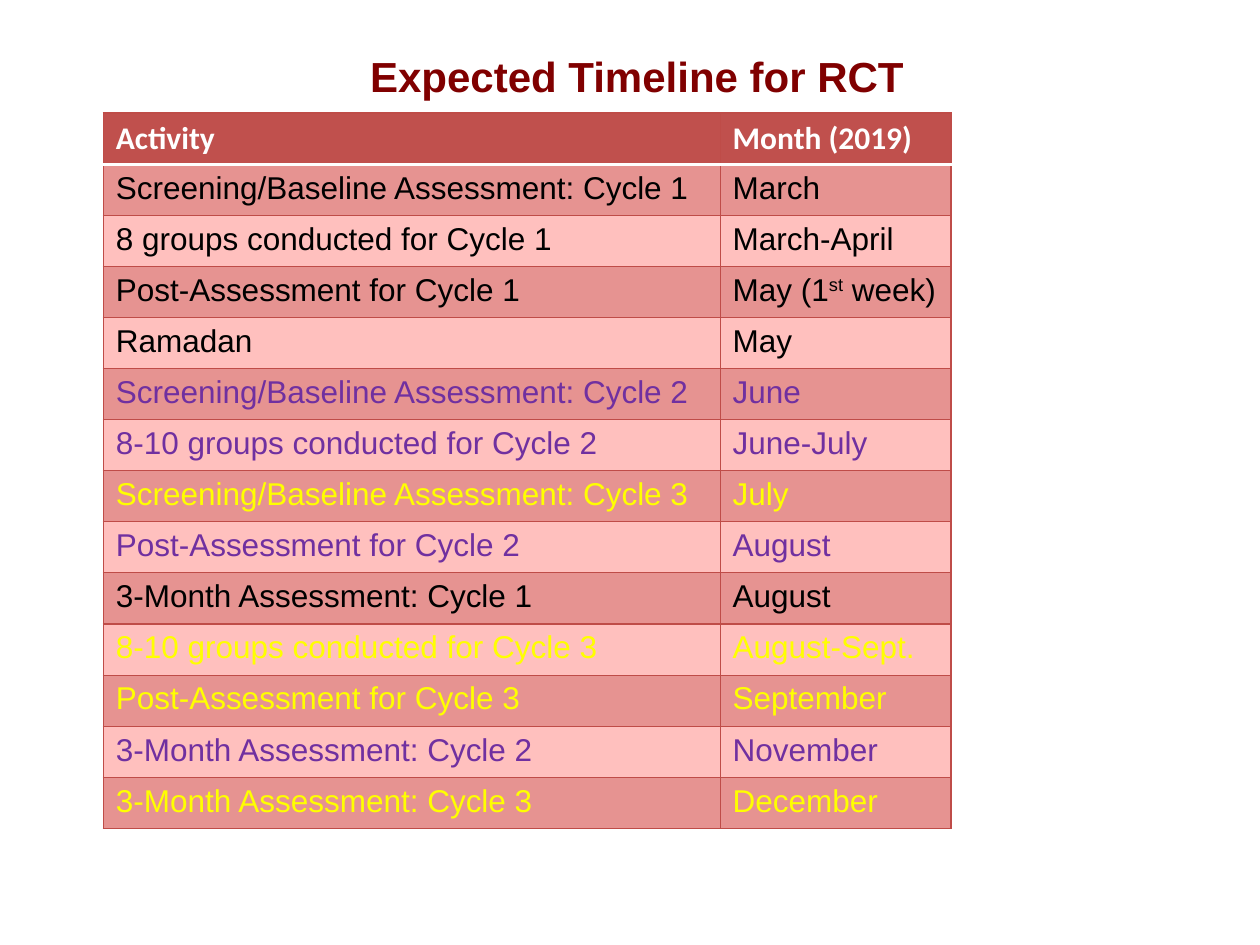
from lxml.etree import SubElement
from pptx import Presentation
from pptx.dml.color import RGBColor
from pptx.enum.text import MSO_ANCHOR, PP_ALIGN
from pptx.oxml.ns import qn
from pptx.util import Pt

COLORS = {
    "title": "800000", "header": "C0504D", "header_text": "FFFFFF",
    "dark_band": "E69391", "light_band": "FFC0BE",
    "grid": "BF4C48", "header_rule": "FFFFFF",
    "cycle 1": "000000", "cycle 2": "7030A0", "cycle 3": "FFFF00",
}
TITLE_FORMAT = {"name": "Arial", "size": Pt(24), "bold": True}
HEADER_FORMAT = {"name": "Calibri", "size": Pt(18), "bold": True}
BODY_FORMAT = {"name": "Arial", "size": Pt(18), "bold": False}

HEADINGS = ("Activity", "Month (2019)")
# Activity, month (a tuple marks text with a raised middle part), cycle
TIMELINE = [
    ("Screening/Baseline Assessment: Cycle 1", "March", 1),
    ("8 groups conducted for Cycle 1", "March-April", 1),
    ("Post-Assessment for Cycle 1", ("May (1", "st", " week)"), 1),
    ("Ramadan", "May", 1),
    ("Screening/Baseline Assessment: Cycle 2", "June", 2),
    ("8-10 groups conducted for Cycle 2", "June-July", 2),
    ("Screening/Baseline Assessment: Cycle 3", "July", 3),
    ("Post-Assessment for Cycle 2", "August", 2),
    ("3-Month Assessment: Cycle 1", "August", 1),
    ("8-10 groups conducted for Cycle 3", "August-Sept.", 3),
    ("Post-Assessment for Cycle 3", "September", 3),
    ("3-Month Assessment: Cycle 2", "November", 2),
    ("3-Month Assessment: Cycle 3", "December", 3),
]


def rgb(key):
    return RGBColor.from_string(COLORS[key])


def add_text(paragraph, text, font_format, color):
    parts = (text,) if isinstance(text, str) else text
    for index, part in enumerate(parts):
        run = paragraph.add_run()
        run.text = part
        for attribute, value in font_format.items():
            setattr(run.font, attribute, value)
        run.font.color.rgb = rgb(color)
        if index == 1:  # raised ordinal ending
            run.font._element.set("baseline", "30000")


def set_borders(cell, edges):
    properties = cell._tc.get_or_add_tcPr()
    for side in ("L", "R", "T", "B"):
        color, width = edges.get(side, ("grid", 0.75))
        line = SubElement(properties, qn(f"a:ln{side}"), w=str(Pt(width)))
        fill = SubElement(line, qn("a:solidFill"))
        SubElement(fill, qn("a:srgbClr"), val=COLORS[color])


def fill_row(cells, texts, font_format, text_color, band, edges):
    for cell, text in zip(cells, texts):
        set_borders(cell, edges)
        cell.fill.solid()
        cell.fill.fore_color.rgb = rgb(band)
        add_text(cell.text_frame.paragraphs[0], text, font_format, text_color)


def place_title(slide, left, top, width, height):
    title = slide.shapes.title
    box = {"left": left, "top": top, "width": width, "height": height}
    for attribute, value in box.items():
        setattr(title, attribute, Pt(value))
    frame = title.text_frame
    frame.word_wrap = True
    frame.vertical_anchor = MSO_ANCHOR.MIDDLE
    heading = frame.paragraphs[0]
    heading.alignment = PP_ALIGN.CENTER
    add_text(heading, "Expected Timeline for RCT", TITLE_FORMAT, "title")


def place_timeline(slide, left, top, width, height):
    row_count = len(TIMELINE) + 1
    timeline = slide.shapes.add_table(
        row_count, 2, Pt(left), Pt(top), Pt(width), Pt(height)).table
    month_width = 132
    for column, column_width in zip(timeline.columns, (width - month_width, month_width)):
        column.width = Pt(column_width)
    for row in timeline.rows:
        row.height = Pt(height / row_count)

    # Header row, then bands coloured by cycle
    rule = ("header_rule", 2)
    header, *body = timeline.rows
    fill_row(header.cells, HEADINGS, HEADER_FORMAT, "header_text", "header",
             {"B": rule, "L": ("grid", 0.75)})
    for index, (row, (activity, month, cycle)) in enumerate(zip(body, TIMELINE)):
        band = "light_band" if index % 2 else "dark_band"
        fill_row(row.cells, (activity, month), BODY_FORMAT, f"cycle {cycle}", band,
                 {} if index else {"T": rule})


def main():
    deck = Presentation()
    deck.slide_width, deck.slide_height = Pt(720), Pt(540)
    slide = deck.slides.add_slide(deck.slide_layouts[5])
    place_title(slide, 59, 25.5, 610, 36)
    place_timeline(slide, 59, 64.6, 484.5, 409)
    deck.save("out.pptx")


if __name__ == "__main__":
    main()
